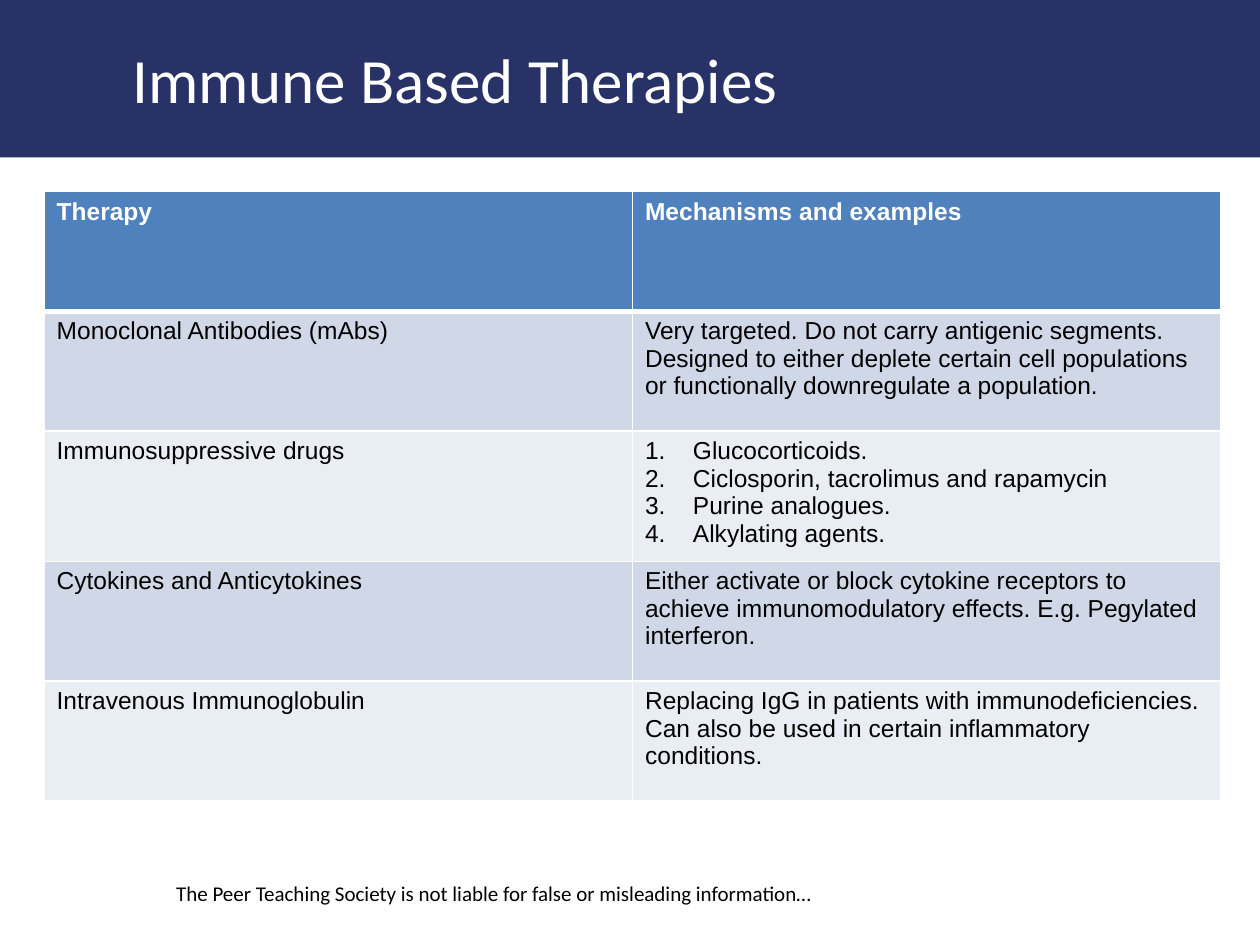
from lxml.etree import SubElement
from pptx import Presentation
from pptx.dml.color import RGBColor
from pptx.enum.shapes import MSO_SHAPE as Shape
from pptx.enum.text import MSO_ANCHOR as Anchor, MSO_AUTO_SIZE as Fit, PP_ALIGN as Align
from pptx.oxml import parse_xml
from pptx.oxml.ns import nsdecls, qn
from pptx.util import Inches, Pt

NAVY = RGBColor(0x29, 0x32, 0x67)
BLUE = RGBColor(0x4F, 0x81, 0xBD)
BANDS = RGBColor(0xD0, 0xD8, 0xE8), RGBColor(0xE9, 0xED, 0xF4)
WHITE = RGBColor(0xFF, 0xFF, 0xFF)
BLACK = RGBColor(0, 0, 0)

# A list in a cell becomes numbered paragraphs.
ROWS = [
    ("Therapy", "Mechanisms and examples"),
    ("Monoclonal Antibodies (mAbs)",
     "Very targeted. Do not carry antigenic segments. Designed to either deplete "
     "certain cell populations or functionally downregulate a population."),
    ("Immunosuppressive drugs",
     ["Glucocorticoids.", "Ciclosporin, tacrolimus and rapamycin",
      "Purine analogues.", "Alkylating agents."]),
    ("Cytokines and Anticytokines",
     "Either activate or block cytokine receptors to achieve immunomodulatory "
     "effects. E.g. Pegylated interferon."),
    ("Intravenous Immunoglobulin",
     "Replacing IgG in patients with immunodeficiencies. Can also be used in "
     "certain inflammatory conditions."),
]


class Deck:
    head_font = "Calibri"
    cell_font = "Arial"

    def __init__(self):
        self.prs = Presentation()
        self.prs.slide_width, self.prs.slide_height = Inches(10), Inches(7.5)
        self.slide = self.prs.slides.add_slide(self.prs.slide_layouts[5])

    def run(self, para, text, font, size, color, bold=False):
        run = para.add_run()
        run.text = text
        run.font.name, run.font.size = font, Pt(size)
        run.font.color.rgb, run.font.bold = color, bold

    def band(self, width, height):
        """Draw the top band behind everything else."""
        bar = self.slide.shapes.add_shape(Shape.RECTANGLE, 0, 0, Inches(width), Inches(height))
        bar.shadow.inherit = False
        bar.fill.solid()
        bar.fill.fore_color.rgb = NAVY
        bar.line.fill.background()
        self.slide.shapes._spTree.insert(2, bar._element)

    def title(self, text, left, top, width, height):
        box = self.slide.shapes.title
        box.left, box.top = Inches(left), Inches(top)
        box.width, box.height = Inches(width), Inches(height)
        frame = box.text_frame
        frame.auto_size = Fit.SHAPE_TO_FIT_TEXT
        frame.vertical_anchor = Anchor.TOP
        para = frame.paragraphs[0]
        para.alignment = Align.LEFT
        self.run(para, text, self.head_font, 36, WHITE)

    def note(self, text, left, top, width, height):
        box = self.slide.shapes.add_textbox(*map(Inches, (left, top, width, height)))
        box.text_frame.word_wrap = True
        self.run(box.text_frame.paragraphs[0], text, self.head_font, 12, BLACK)

    def number(self, para):
        props = para._p.get_or_add_pPr()
        props.set("marL", str(Inches(0.38)))
        props.set("indent", str(-Inches(0.38)))
        SubElement(props, qn("a:buFont"), typeface="+mj-lt")
        SubElement(props, qn("a:buAutoNum"), type="arabicPeriod")

    def border(self, cell, top, bottom):
        """Set white cell borders; they must come before the fill."""
        props = cell._tc.get_or_add_tcPr()
        for i, (side, width) in enumerate(zip("LRTB", (1, 1, top, bottom))):
            props.insert(i, parse_xml(
                f'<a:ln{side} {nsdecls("a")} w="{Pt(width)}"><a:solidFill>'
                f'<a:srgbClr val="{WHITE}"/></a:solidFill></a:ln{side}>'))

    def cell(self, cell, text, row):
        head = row == 0
        cell.fill.solid()
        cell.fill.fore_color.rgb = BLUE if head else BANDS[(row - 1) % 2]
        self.border(cell, 3 if row == 1 else 1, 3 if head else 1)
        listed = isinstance(text, list)
        frame = cell.text_frame
        for i, line in enumerate(text if listed else [text]):
            para = frame.add_paragraph() if i else frame.paragraphs[0]
            if listed:
                self.number(para)
            self.run(para, line, self.cell_font, 14, WHITE if head else BLACK, head)

    def table(self, rows, left, top, col, height):
        count = len(rows[0])
        grid = self.slide.shapes.add_table(
            len(rows), count, Inches(left), Inches(top),
            Inches(col * count), Inches(height * len(rows))).table
        for r, texts in enumerate(rows):
            for c, text in enumerate(texts):
                self.cell(grid.cell(r, c), text, r)


def main():
    deck = Deck()
    deck.band(10, 1.25)
    deck.title("Immune Based Therapies", 0.95, 0.27, 6.24, 0.71)
    deck.table(ROWS, 0.35, 1.52, 4.67, 0.95)
    deck.note("The Peer Teaching Society is not liable for false or misleading information…",
              1.3, 6.94, 5.54, 0.3)
    deck.prs.save("out.pptx")


if __name__ == "__main__":
    main()
